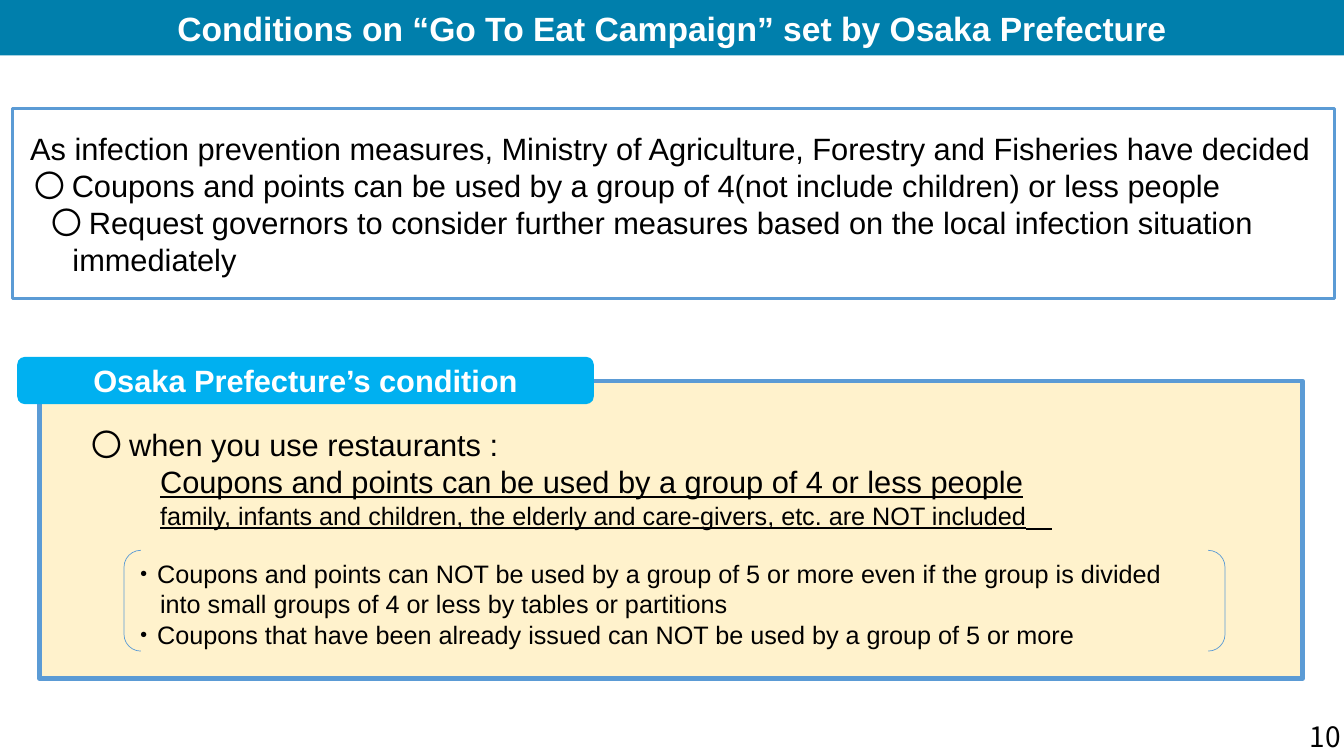
from dataclasses import dataclass

from pptx import Presentation
from pptx.dml.color import RGBColor
from pptx.enum.shapes import MSO_SHAPE
from pptx.enum.text import MSO_ANCHOR, PP_ALIGN
from pptx.util import Inches, Pt


@dataclass(frozen=True)
class Theme:
    banner: str = "007FAC"
    label: str = "00B0F0"
    outline: str = "5B9BD5"
    panel: str = "FFF2CC"
    ink: str = "000000"
    white: str = "FFFFFF"
    font: str = "Arial"
    number_font: str = "Noto Sans CJK JP"
    title: int = 24
    body: int = 22
    number: int = 20
    detail: int = 18


class SlideBuilder:
    def __init__(self, slide, theme):
        self.slide = slide
        self.theme = theme

    def shape(self, kind, box, fill=None, line_width=None):
        shape = self.slide.shapes.add_shape(kind, *map(Inches, box))
        shape.shadow.inherit = False
        if fill:
            shape.fill.solid()
            shape.fill.fore_color.rgb = RGBColor.from_string(fill)
        else:
            shape.fill.background()
        if line_width:
            shape.line.color.rgb = RGBColor.from_string(self.theme.outline)
            shape.line.width = Pt(line_width)
        else:
            shape.line.fill.background()
        return shape

    def textbox(self, box, lines, anchor=MSO_ANCHOR.MIDDLE, **style):
        holder = self.slide.shapes.add_textbox(*map(Inches, box))
        self.set_text(holder, lines, anchor, **style)

    def heading(self, kind, box, fill, text, size):
        self.set_text(self.shape(kind, box, fill), [(0, text)], size=size,
                      color=self.theme.white, bold=True, align=PP_ALIGN.CENTER)

    def set_text(self, holder, lines, anchor=MSO_ANCHOR.MIDDLE, size=None, color=None,
                 font=None, bold=False, align=PP_ALIGN.LEFT):
        frame = holder.text_frame
        frame.word_wrap = True
        frame.vertical_anchor = anchor
        for index, (indent, text, *underlined_size) in enumerate(lines):
            paragraph = frame.paragraphs[0] if index == 0 else frame.add_paragraph()
            paragraph.text = text
            paragraph.alignment = align
            self.style(paragraph.font, size or self.theme.body, color, font, bold)
            if indent:
                properties = paragraph._p.get_or_add_pPr()
                properties.set("marL", str(Inches(indent)))
                properties.set("indent", "0")
            if underlined_size:
                paragraph.font.size = Pt(underlined_size[0])
                paragraph.font.underline = True

    def style(self, target, size, color, font, bold):
        target.name = font or self.theme.font
        target.size = Pt(size)
        target.bold = bold
        target.color.rgb = RGBColor.from_string(color or self.theme.ink)


def main():
    theme = Theme()
    presentation = Presentation()
    presentation.slide_width = Inches(13.33)
    presentation.slide_height = Inches(7.5)
    slide = presentation.slides.add_slide(presentation.slide_layouts[6])
    builder = SlideBuilder(slide, theme)

    builder.heading(MSO_SHAPE.RECTANGLE, (0, 0, 13.33, 0.55), theme.banner,
                    "Conditions on “Go To Eat Campaign” set by Osaka Prefecture", theme.title)
    builder.textbox((10.4, 7.1, 3, 0.4), [(0, "10")], size=theme.number,
                    font=theme.number_font, align=PP_ALIGN.RIGHT)

    builder.shape(MSO_SHAPE.RECTANGLE, (0.39, 3.78, 12.53, 2.95), theme.panel, 3.25)
    ministry_decision = builder.shape(MSO_SHAPE.RECTANGLE, (0.12, 1.08, 13.12, 1.88),
                                      line_width=2.25)
    builder.set_text(ministry_decision, [
        (0.08, "As infection prevention measures, Ministry of Agriculture, "
               "Forestry and Fisheries have decided"),
        (0.12, "〇 Coupons and points can be used by a group of 4"
               "(not include children) or less people"),
        (0.29, "〇 Request governors to consider further measures "
               "based on the local infection situation"),
        (0.5, "immediately"),
    ])

    builder.textbox((0.81, 3.88, 11.93, 1.73), [
        (0, "〇 when you use restaurants :"),
        (0.68, "Coupons and points can be used by a group of 4 or less people", theme.body),
        (0.68, "family, infants and children, the elderly and care-givers, etc. "
               "are NOT included　", theme.detail),
    ])
    builder.textbox((1.21, 5.49, 10.92, 1.01), [
        (0, "・Coupons and points can NOT be used by a group of 5 or more "
            "even if the group is divided"),
        (0.28, "into small groups of 4 or less by tables or partitions"),
        (0, "・Coupons that have been already issued can NOT be used by a group of 5 or more"),
    ], anchor=MSO_ANCHOR.TOP, size=theme.detail)
    builder.shape(MSO_SHAPE.DOUBLE_BRACKET, (1.23, 5.46, 10.92, 1), line_width=0.5)

    builder.heading(MSO_SHAPE.ROUNDED_RECTANGLE, (0.17, 3.54, 5.72, 0.47), theme.label,
                    "Osaka Prefecture’s condition", theme.body)
    presentation.save("out.pptx")


if __name__ == "__main__":
    main()
